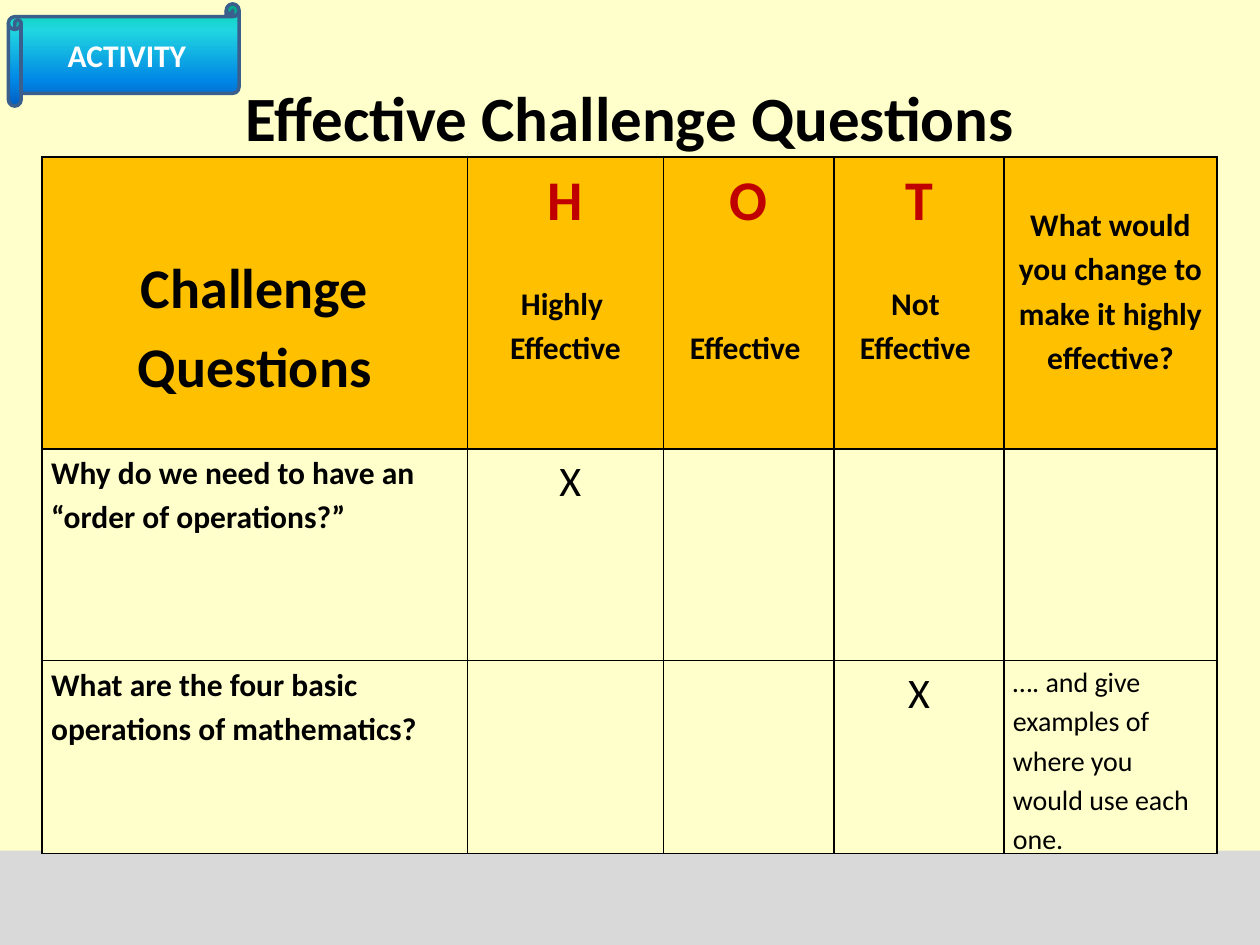
from dataclasses import dataclass

from lxml.etree import SubElement
from pptx import Presentation
from pptx.dml.color import RGBColor
from pptx.enum.shapes import MSO_SHAPE
from pptx.enum.text import MSO_ANCHOR, PP_ALIGN
from pptx.oxml.ns import qn
from pptx.util import Cm, Pt

FONT = "Calibri"
BLACK, RED, WHITE = "000000", "C00000", "FFFFFF"
CREAM, AMBER, GREY = "FFFFCC", "FFC000", "D9D9D9"
LINE_SPACING = 1.15
BLANK_LINE = 25.3  # points taken by one 18 pt line at this spacing


@dataclass
class Line:
    text: str
    size: int = 18
    bold: bool = True
    color: str = BLACK
    centered: bool = True
    gap_lines: int = 0


@dataclass
class Entry:
    """Content of one table cell, starting top_lines below its upper edge."""
    lines: tuple[Line, ...] = ()
    top_lines: int = 0


HEADINGS = [
    Entry((Line("Challenge", 32), Line("Questions", 32)), top_lines=2),
    Entry((Line("H", 32, color=RED), Line("Highly ", gap_lines=1), Line("Effective"))),
    Entry((Line("O", 32, color=RED), Line("Effective ", gap_lines=2))),
    Entry((Line("T", 32, color=RED), Line("Not ", gap_lines=1), Line("Effective "))),
    Entry((Line("What would you change to make it highly effective?"),), top_lines=1),
]
ORDER_QUESTION = [
    Entry((Line("Why do we need to have an “order of operations?”", centered=False),)),
    Entry((Line(" X", 24, bold=False),)),
    Entry(), Entry(), Entry(),
]
BASICS_QUESTION = [
    Entry((Line("What are the four basic operations of mathematics?", centered=False),)),
    Entry(), Entry(),
    Entry((Line("X", 24, bold=False),)),
    Entry((Line("…. and give examples of where you would use each one.", 16,
                bold=False, centered=False),)),
]
ROWS = [HEADINGS, ORDER_QUESTION, BASICS_QUESTION]
COLUMN_WIDTHS = [8.57, 3.96, 3.43, 3.43, 4.29]
ROW_HEIGHTS = [5.89, 4.27, 3.2]
SCROLL_STOPS = [(0, "03D4A8"), (25, "21D6E0"), (75, "0087E6"), (100, "005CBF")]


def rgb(color: str) -> RGBColor:
    return RGBColor.from_string(color)


def write_line(paragraph, line: Line) -> None:
    paragraph.alignment = PP_ALIGN.CENTER if line.centered else PP_ALIGN.LEFT
    run = paragraph.add_run()
    run.text = line.text
    run.font.name = FONT
    run.font.size = Pt(line.size)
    run.font.bold = line.bold
    run.font.color.rgb = rgb(line.color)


def border_cell(cell) -> None:
    """Outline all four sides; borders must precede the fill in tcPr."""
    properties = cell._tc.get_or_add_tcPr()
    for index, side in enumerate(("lnL", "lnR", "lnT", "lnB")):
        border = SubElement(properties, qn(f"a:{side}"), w=str(Pt(1)))
        fill = SubElement(border, qn("a:solidFill"))
        SubElement(fill, qn("a:srgbClr"), val=BLACK)
        properties.insert(index, border)


def fill_cell(cell, entry: Entry, color: str) -> None:
    cell.margin_left = cell.margin_right = Cm(0.18)
    cell.margin_top = Pt(entry.top_lines * BLANK_LINE)
    cell.margin_bottom = 0
    border_cell(cell)
    cell.fill.solid()
    cell.fill.fore_color.rgb = rgb(color)
    frame = cell.text_frame
    for index, line in enumerate(entry.lines):
        paragraph = frame.add_paragraph() if index else frame.paragraphs[0]
        paragraph.line_spacing = LINE_SPACING
        if line.gap_lines:
            paragraph.space_before = Pt(line.gap_lines * BLANK_LINE)
        write_line(paragraph, line)


def add_question_table(slide) -> None:
    table = slide.shapes.add_table(
        len(ROWS), len(COLUMN_WIDTHS), Cm(0.85), Cm(3.16),
        Cm(sum(COLUMN_WIDTHS)), Cm(sum(ROW_HEIGHTS))).table
    table.first_row = table.horz_banding = False
    for column, width in zip(table.columns, COLUMN_WIDTHS):
        column.width = Cm(width)
    for index, (entries, height) in enumerate(zip(ROWS, ROW_HEIGHTS)):
        table.rows[index].height = Cm(height)
        for cell, entry in zip(table.rows[index].cells, entries):
            fill_cell(cell, entry, CREAM if index else AMBER)


def add_footer_band(slide) -> None:
    band = slide.shapes.add_shape(
        MSO_SHAPE.RECTANGLE, 0, Cm(17.15), Cm(25.4), Cm(1.9))
    band.shadow.inherit = False
    band.fill.solid()
    band.fill.fore_color.rgb = rgb(GREY)
    band.line.fill.background()


def add_title(slide) -> None:
    frame = slide.shapes.add_textbox(
        Cm(1.27), Cm(0.76), Cm(22.86), Cm(3.18)).text_frame
    frame.word_wrap = True
    frame.vertical_anchor = MSO_ANCHOR.MIDDLE
    write_line(frame.paragraphs[0], Line("Effective Challenge Questions", 36))


def add_activity_scroll(slide) -> None:
    scroll = slide.shapes.add_shape(
        MSO_SHAPE.HORIZONTAL_SCROLL, Cm(0.17), Cm(0.08), Cm(4.65), Cm(2.06))
    scroll.shadow.inherit = False
    scroll.fill.gradient()
    scroll.fill.gradient_angle = 270
    stops = scroll._element.spPr.find(f"{qn('a:gradFill')}/{qn('a:gsLst')}")
    for stop in list(stops):
        stops.remove(stop)
    for percent, color in SCROLL_STOPS:
        stop = SubElement(stops, qn("a:gs"), pos=str(percent * 1000))
        SubElement(stop, qn("a:srgbClr"), val=color)
    scroll.line.color.rgb = rgb("3A5F8C")
    scroll.line.width = Pt(2)
    scroll.text_frame.vertical_anchor = MSO_ANCHOR.MIDDLE
    write_line(scroll.text_frame.paragraphs[0], Line("ACTIVITY", color=WHITE))


def main() -> None:
    deck = Presentation()
    deck.slide_width, deck.slide_height = Cm(25.4), Cm(19.05)
    slide = deck.slides.add_slide(deck.slide_layouts[6])
    slide.background.fill.solid()
    slide.background.fill.fore_color.rgb = rgb(CREAM)
    add_footer_band(slide)
    add_title(slide)
    add_question_table(slide)
    add_activity_scroll(slide)
    deck.save("out.pptx")


if __name__ == "__main__":
    main()
